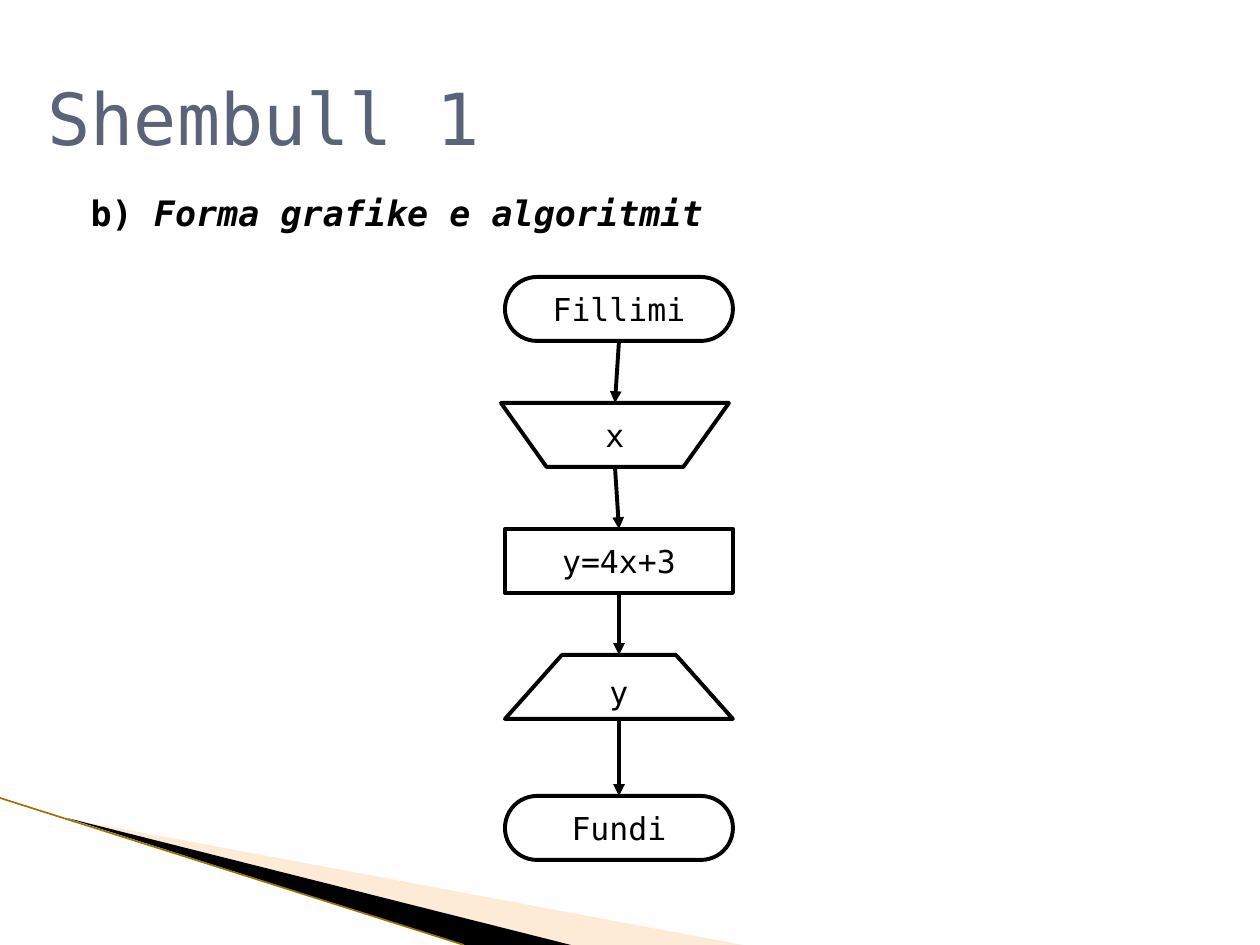
from dataclasses import dataclass

from pptx import Presentation
from pptx import util as u
from pptx.dml.color import RGBColor
from pptx.enum import shapes, text
from pptx.oxml.ns import qn
from lxml import etree

PX = 914400 / 126  # EMU in one px
Point = tuple[int, int]


def emu(px: int) -> u.Emu:
    return u.Emu(round(px * PX))


@dataclass(frozen=True)
class Theme:
    font: str = "DejaVu Sans Mono"
    ink: str = "000000"
    paper: str = "FFFFFF"
    title: str = "5A6378"
    band: str = "FCCF9B"
    band_alpha: int = 40
    edge: str = "9C7200"
    title_size: int = 41
    body_size: int = 20
    node_size: int = 18
    outline: float = 2.25
    edge_width: float = 0.95


@dataclass(frozen=True)
class Node:
    label: str
    kind: shapes.MSO_SHAPE
    left: int
    top: int
    adjustment: float | None = None


THEME = Theme()
NODE_WIDTH, NODE_HEIGHT = 228, 64
TERMINAL = shapes.MSO_SHAPE.ROUNDED_RECTANGLE

FLOW = [
    Node("Fillimi", TERMINAL, 505, 277, 0.5),
    Node("x", shapes.MSO_SHAPE.FLOWCHART_MANUAL_OPERATION, 501, 403),
    Node("y=4x+3", shapes.MSO_SHAPE.RECTANGLE, 505, 529),
    Node("y", shapes.MSO_SHAPE.TRAPEZOID, 505, 655, 0.89),
    Node("Fundi", TERMINAL, 505, 796, 0.5),
]


def rgb(colour: str) -> RGBColor:
    return RGBColor.from_string(colour)


def format_font(font, colour: str, **values) -> None:
    for name, value in {"name": THEME.font, **values}.items():
        setattr(font, name, value)
    font.color.rgb = rgb(colour)


def place(shape, left: int, top: int, width: int, height: int) -> None:
    box = {"left": left, "top": top, "width": width, "height": height}
    for name, value in box.items():
        setattr(shape, name, emu(value))


def add_wedge(slide, points: list[Point], colour: str, alpha: int = 100) -> None:
    builder = slide.shapes.build_freeform(*points[0], scale=PX)
    builder.add_line_segments(points[1:], close=True)
    wedge = builder.convert_to_shape()
    wedge.shadow.inherit = False
    wedge.fill.solid()
    wedge.fill.fore_color.rgb = rgb(colour)
    wedge.line.fill.background()
    if alpha < 100:
        tint = wedge.fill._xPr.find(".//" + qn("a:srgbClr"))
        etree.SubElement(tint, qn("a:alpha"), val=str(alpha * 1000))


def add_line(slide, start: Point, end: Point, colour: str, width: float):
    line = slide.shapes.add_connector(
        shapes.MSO_CONNECTOR.STRAIGHT, *map(emu, start + end))
    line.line.color.rgb = rgb(colour)
    line.line.width = u.Pt(width)
    etree.SubElement(line._element.spPr, qn("a:effectLst"))
    return line


def add_node(slide, node: Node):
    step = slide.shapes.add_shape(
        node.kind, *map(emu, (node.left, node.top, NODE_WIDTH, NODE_HEIGHT)))
    if node.adjustment is not None:
        step.adjustments[0] = node.adjustment
    step.shadow.inherit = False
    step.fill.solid()
    step.fill.fore_color.rgb = rgb(THEME.paper)
    step.line.color.rgb = rgb(THEME.ink)
    step.line.width = u.Pt(THEME.outline)
    step.text_frame.vertical_anchor = text.MSO_ANCHOR.MIDDLE
    label = step.text_frame.paragraphs[0]
    label.text = node.label
    label.alignment = text.PP_ALIGN.CENTER
    format_font(label.font, THEME.ink, size=u.Pt(THEME.node_size))
    return step


def add_arrow(slide, source, target) -> None:
    arrow = add_line(slide, (0, 0), (0, 0), THEME.ink, THEME.outline)
    arrow.begin_connect(source, 2)
    arrow.end_connect(target, 0)
    etree.SubElement(arrow.line._get_or_add_ln(), qn("a:tailEnd"), type="triangle")


def fill_title(title) -> None:
    place(title, 35, 38, 1134, 157)
    title.text_frame.auto_size = text.MSO_AUTO_SIZE.NONE
    title.text_frame.vertical_anchor = text.MSO_ANCHOR.MIDDLE
    heading = title.text_frame.paragraphs[0]
    heading.text = "Shembull 1"
    heading.alignment = text.PP_ALIGN.LEFT
    format_font(heading.font, THEME.title, size=u.Pt(THEME.title_size))


def fill_body(body) -> None:
    place(body, 63, 185, 1134, 624)
    body.text_frame.auto_size = text.MSO_AUTO_SIZE.NONE
    item = body.text_frame.paragraphs[0]
    properties = item._p.get_or_add_pPr()
    properties.set("marL", str(emu(15)))
    properties.set("indent", "0")
    etree.SubElement(properties, qn("a:buNone"))
    item.space_before = u.Pt(0)
    for wording, italic in (("b) ", False), ("Forma grafike e algoritmit", True)):
        run = item.add_run()
        run.text = wording
        format_font(run.font, THEME.ink, size=u.Pt(THEME.body_size),
                    bold=True, italic=italic)


def main() -> None:
    deck = Presentation()
    deck.slide_width, deck.slide_height = emu(1260), emu(945)
    slide = deck.slides.add_slide(deck.slide_layouts[1])

    # Corner decoration
    add_wedge(slide, [(69, 819), (743, 945), (571, 945)],
              THEME.band, THEME.band_alpha)
    add_wedge(slide, [(67, 818), (571, 945), (464, 945)], THEME.ink)
    add_line(slide, (0, 798), (464, 945), THEME.edge, THEME.edge_width)

    # Title and subtitle
    fill_title(slide.shapes.title)
    fill_body(slide.placeholders[1])

    # Flowchart
    steps = [add_node(slide, node) for node in FLOW]
    for source, target in zip(steps, steps[1:]):
        add_arrow(slide, source, target)

    deck.save("out.pptx")


if __name__ == "__main__":
    main()
